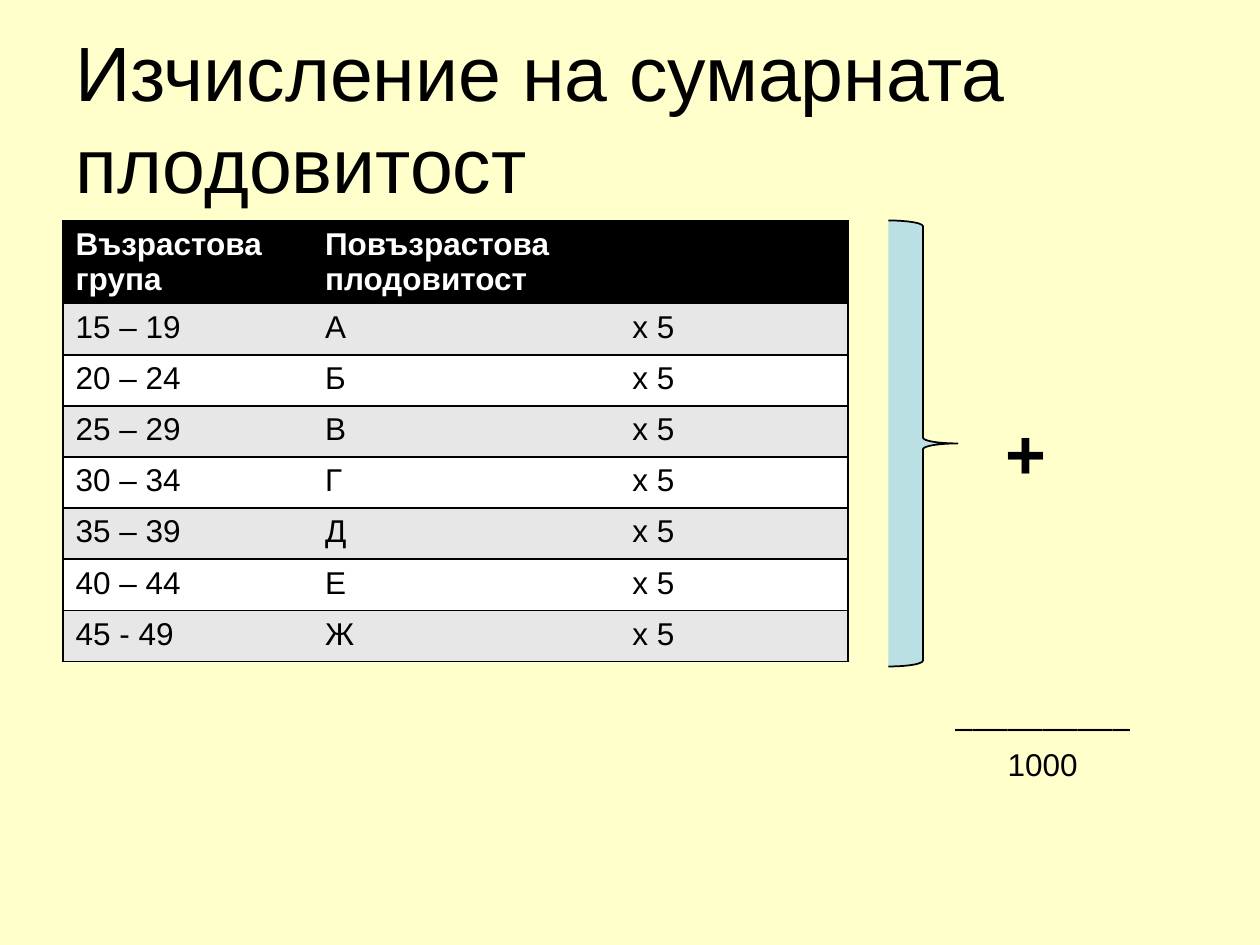
import pptx
import pptx.util
import pptx.dml.color
import pptx.enum.shapes
import pptx.enum.text
import pptx.oxml
import pptx.oxml.ns

Inches = pptx.util.Inches
Pt = pptx.util.Pt
RGBColor = pptx.dml.color.RGBColor
ALIGN = pptx.enum.text.PP_ALIGN
ANCHOR = pptx.enum.text.MSO_ANCHOR

BLACK = RGBColor(0x00, 0x00, 0x00)
WHITE = RGBColor(0xFF, 0xFF, 0xFF)
GRAY = RGBColor(0xE7, 0xE7, 0xE7)
CREAM = RGBColor(0xFF, 0xFF, 0xCC)
TEAL = RGBColor(0xBB, 0xE0, 0xE3)


def write(par, text, size, color=BLACK, bold=False, align=ALIGN.LEFT):
    par.alignment = align
    run = par.add_run()
    run.text = text
    run.font.name = "Arial"
    run.font.size = Pt(size)
    run.font.bold = bold
    run.font.color.rgb = color


def edge(cell, side, shown):
    """Draw one border of a cell in black, or clear it."""
    fill = f'<a:solidFill><a:srgbClr val="{BLACK}"/></a:solidFill>' if shown else "<a:noFill/>"
    line = f'<a:ln{side} {pptx.oxml.ns.nsdecls("a")} w="12700">{fill}</a:ln{side}>'
    cell._tc.get_or_add_tcPr().append(pptx.oxml.parse_xml(line))


deck = pptx.Presentation()
deck.slide_width = Inches(10)
deck.slide_height = Inches(7.5)
slide = deck.slides.add_slide(deck.slide_layouts[5])
slide.background.fill.solid()
slide.background.fill.fore_color.rgb = CREAM

# Title
title = slide.shapes.title
title.left, title.top = Inches(0.5), Inches(0.3)
title.width, title.height = Inches(9), Inches(1.25)
frame = title.text_frame
frame.auto_size = pptx.enum.text.MSO_AUTO_SIZE.NONE
frame.vertical_anchor = ANCHOR.MIDDLE
write(frame.paragraphs[0], "Изчисление на сумарната плодовитост", 44)

# Fertility by age group
rows = [("Възрастова група", "Повъзрастова плодовитост", "")]
ages = ["15 – 19", "20 – 24", "25 – 29", "30 – 34", "35 – 39", "40 – 44", "45 - 49"]
rows += [(age, rate, "х 5") for age, rate in zip(ages, "АБВГДЕЖ")]
widths = [1.98, 2.44, 1.81]
table = slide.shapes.add_table(
    len(rows), len(widths), Inches(0.5), Inches(1.75), Inches(6.23), Inches(3.5)
).table
for col, width in zip(table.columns, widths):
    col.width = Inches(width)
for i, row in enumerate(rows):
    head = i == 0
    table.rows[i].height = Inches(0.66) if head else Inches(2.84) // len(ages)
    for j, text in enumerate(row):
        cell = table.cell(i, j)
        edge(cell, "L", j == 0)
        edge(cell, "R", j == len(row) - 1)
        edge(cell, "T", True)
        edge(cell, "B", True)
        cell.fill.solid()
        cell.fill.fore_color.rgb = BLACK if head else GRAY if i % 2 else WHITE
        if text:
            write(cell.text_frame.paragraphs[0], text, 18, WHITE if head else BLACK, head)

# Brace that sums the rows
brace = slide.shapes.add_shape(
    pptx.enum.shapes.MSO_SHAPE.RIGHT_BRACE,
    Inches(7.05), Inches(1.75), Inches(0.55), Inches(3.54),
)
brace.shadow.inherit = False
brace.fill.solid()
brace.fill.fore_color.rgb = TEAL
brace.line.color.rgb = BLACK
brace.line.width = Pt(1)

# Plus sign and divisor
notes = [
    ((7.83, 3.2, 0.63, 0.77), ["+"], 40, True),
    ((7.05, 5.56, 2.45, 0.71), ["––––––––––", "1000"], 18, False),
]
for place, lines, size, bold in notes:
    frame = slide.shapes.add_textbox(*map(Inches, place)).text_frame
    frame.word_wrap = True
    for k, text in enumerate(lines):
        par = frame.add_paragraph() if k else frame.paragraphs[0]
        write(par, text, size, bold=bold, align=ALIGN.CENTER)

deck.save("out.pptx")
